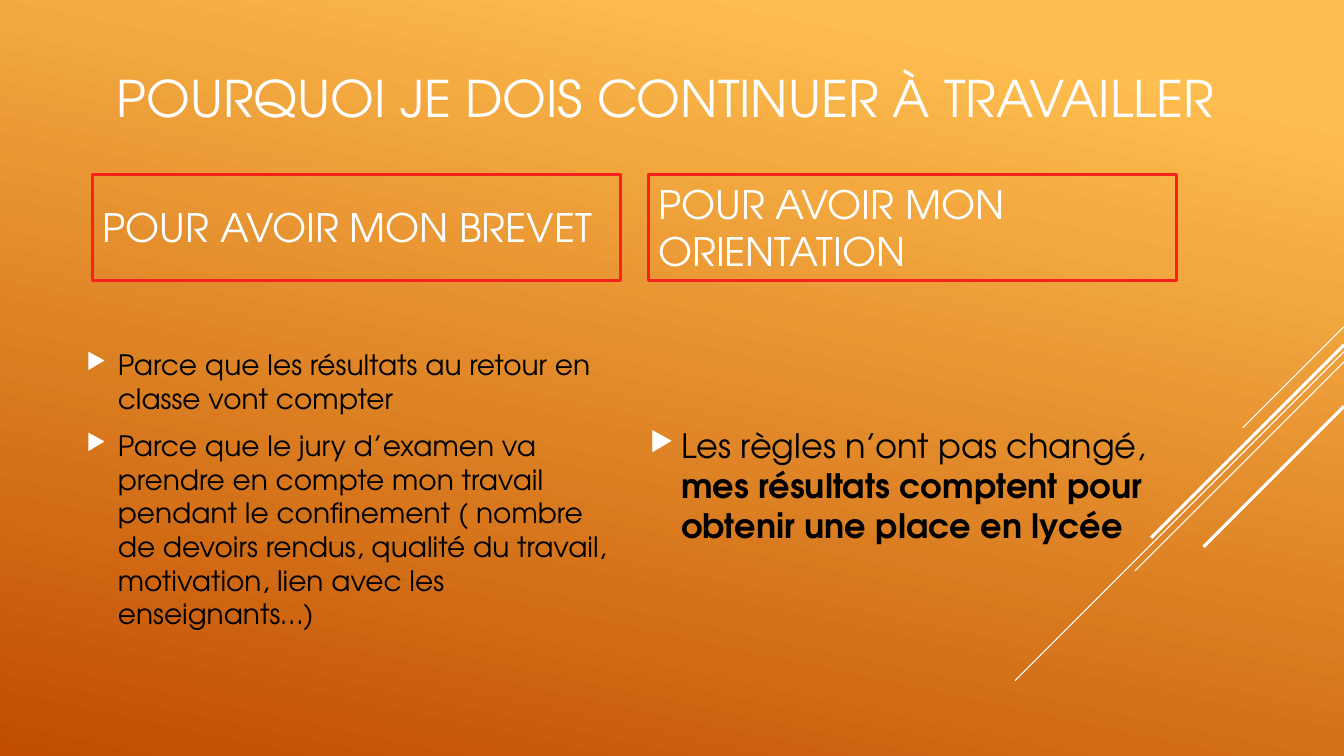
from lxml.etree import SubElement
from pptx import Presentation
from pptx.dml.color import RGBColor
from pptx.enum.shapes import MSO_CONNECTOR, MSO_SHAPE
from pptx.enum.text import MSO_ANCHOR, MSO_AUTO_SIZE, PP_ALIGN
from pptx.oxml.ns import qn
from pptx.util import Cm, Pt

FONT = "TeX Gyre Adventor"
COLORS = {
    "sky": "FFBF50",
    "ground": "C04D00",
    "light": "FFFFFF",
    "ink": "000000",
    "frame": "F9211B",
}
WIDTH, HEIGHT = 33.87, 19.05

TITLE = "POURQUOI JE DOIS CONTINUER À TRAVAILLER"
REASONS = [
    {
        "heading": "POUR AVOIR MON BREVET",
        "size": 20,
        "body": (1.93, 7.8, 13.72, 9.04),
        "points": [
            [("Parce que les résultats au retour en classe vont compter", False)],
            [("Parce que le jury d’examen va prendre en compte mon travail "
              "pendant le confinement ( nombre de devoirs rendus, qualité du "
              "travail, motivation, lien avec les enseignants…)", False)],
        ],
    },
    {
        "heading": "POUR AVOIR MON ORIENTATION",
        "size": 24,
        "body": (16.13, 8.81, 13.72, 6.83),
        "points": [
            [("Les règles n’ont pas changé, ", False),
             ("mes résultats comptent pour obtenir une place en lycée", True)],
        ],
    },
]
HEADING_LEFT, HEADING_TOP, HEADING_PITCH = 2.34, 4.39, 14
HEADING_SIZE = (13.31, 2.67)
RAYS = [(8.23, 2.55, 0.75), (8.86, 8.29, 0.75), (9.12, 5.27, 0.75),
        (8.69, 4.86, 2.25), (10.24, 3.54, 2.25)]


def rgb(name):
    return RGBColor.from_string(COLORS[name])


def style(paragraph, size, color):
    paragraph.alignment = PP_ALIGN.LEFT
    paragraph.font.name = FONT
    paragraph.font.size = Pt(size)
    paragraph.font.color.rgb = rgb(color)


def prepare(frame):
    frame.word_wrap = True
    frame.auto_size = MSO_AUTO_SIZE.NONE
    frame.vertical_anchor = MSO_ANCHOR.MIDDLE


def add_bullet(paragraph):
    props = paragraph._p.get_or_add_pPr()
    props.set("marL", str(Cm(0.79)))
    props.set("indent", str(-Cm(0.79)))
    bullet_color = SubElement(props, qn("a:buClr"))
    SubElement(bullet_color, qn("a:srgbClr"), val=COLORS["light"])
    SubElement(props, qn("a:buSzPct"), val="80000")
    SubElement(props, qn("a:buChar"), char="▶")


def add_ray(slide, top, run, weight):
    ray = slide.shapes.add_connector(
        MSO_CONNECTOR.STRAIGHT,
        Cm(WIDTH), Cm(top), Cm(WIDTH - run), Cm(top + run))
    ray.line.color.rgb = rgb("light")
    ray.line.width = Pt(weight)
    SubElement(ray._element.spPr, qn("a:effectLst"))


def add_heading(slide, column, text):
    heading = slide.shapes.add_shape(
        MSO_SHAPE.RECTANGLE,
        Cm(HEADING_LEFT + column * HEADING_PITCH), Cm(HEADING_TOP),
        *map(Cm, HEADING_SIZE))
    heading.shadow.inherit = False
    heading.fill.background()
    heading.line.color.rgb = rgb("frame")
    heading.line.width = Pt(2.25)
    prepare(heading.text_frame)
    heading.text_frame.text = text
    style(heading.text_frame.paragraphs[0], 28, "light")


def add_body(slide, box, points, size):
    frame = slide.shapes.add_textbox(*map(Cm, box)).text_frame
    prepare(frame)
    for index, point in enumerate(points):
        paragraph = frame.add_paragraph() if index else frame.paragraphs[0]
        paragraph.space_before = Pt(size * 0.2)
        paragraph.space_after = Pt(6)
        add_bullet(paragraph)
        style(paragraph, size, "ink")
        for text, bold in point:
            run = paragraph.add_run()
            run.text = text
            if bold:
                run.font.bold = True


def main():
    deck = Presentation()
    deck.slide_width, deck.slide_height = Cm(WIDTH), Cm(HEIGHT)
    slide = deck.slides.add_slide(deck.slide_layouts[5])

    backdrop = slide.background.fill
    backdrop.gradient()
    backdrop.gradient_angle = 258
    for stop, (position, color) in zip(
            backdrop.gradient_stops, [(0.1, "sky"), (1, "ground")]):
        stop.position = position
        stop.color.rgb = rgb(color)

    for ray in RAYS:
        add_ray(slide, *ray)

    title = slide.shapes.title
    title.left, title.top, title.width, title.height = map(
        Cm, (2.69, 0.53, 29.18, 3.86))
    prepare(title.text_frame)
    title.text_frame.text = TITLE
    style(title.text_frame.paragraphs[0], 36, "light")

    for column, reason in enumerate(REASONS):
        add_heading(slide, column, reason["heading"])
        add_body(slide, reason["body"], reason["points"], reason["size"])

    deck.save("out.pptx")


if __name__ == "__main__":
    main()
